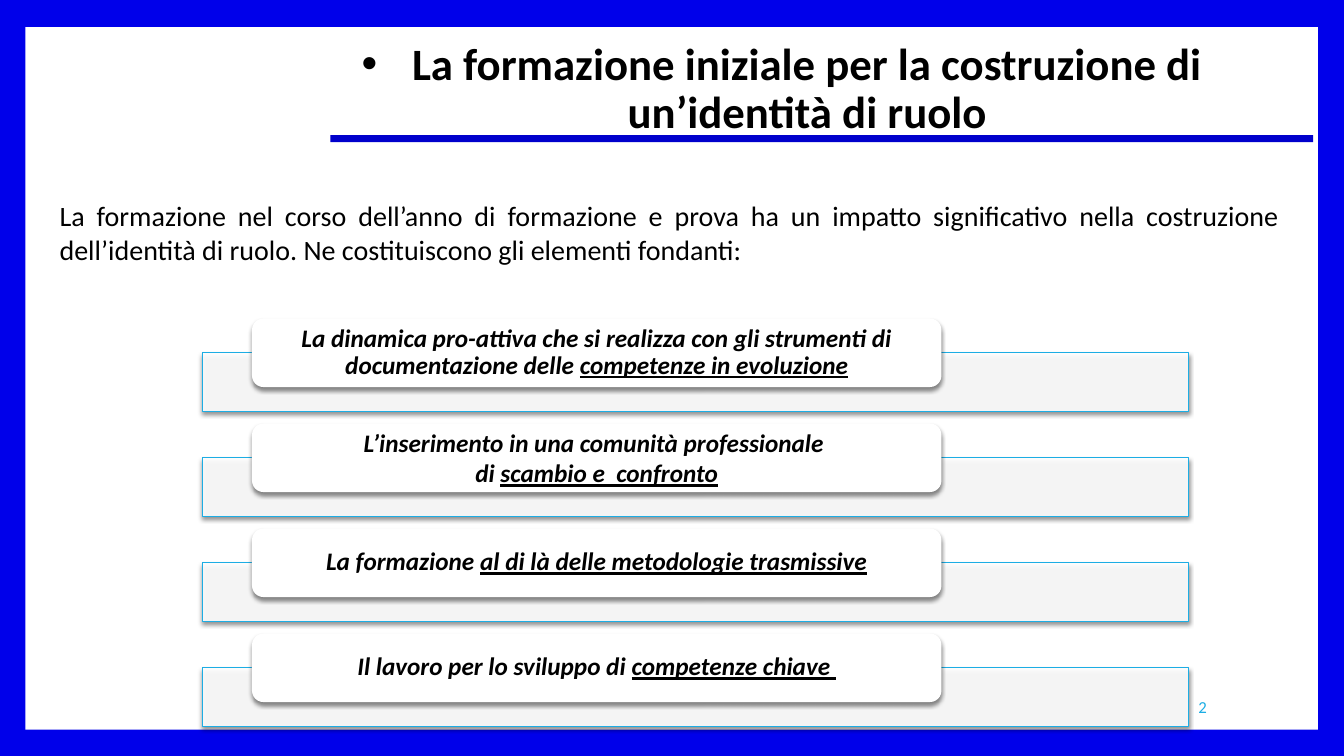
from dataclasses import dataclass
from typing import NamedTuple

from lxml import etree
from pptx import Presentation
from pptx.dml.color import RGBColor
from pptx.enum.shapes import MSO_SHAPE
from pptx.enum.text import MSO_ANCHOR, MSO_AUTO_SIZE, PP_ALIGN
from pptx.oxml.ns import qn
from pptx.util import Emu, Inches, Pt

RECTANGLE, ROUNDED = MSO_SHAPE.RECTANGLE, MSO_SHAPE.ROUNDED_RECTANGLE
TOP, MIDDLE = MSO_ANCHOR.TOP, MSO_ANCHOR.MIDDLE
CENTER, JUSTIFY, RIGHT = PP_ALIGN.CENTER, PP_ALIGN.JUSTIFY, PP_ALIGN.RIGHT
NO_FIT = MSO_AUTO_SIZE.NONE
WIDTH, HEIGHT = Inches(13.33), Inches(7.5)


@dataclass(frozen=True)
class Theme:
    font: str = "Calibri"
    border: str = "0000EA"
    paper: str = "FFFFFF"
    ink: str = "000000"
    rule: str = "0000CC"
    accent: str = "1CADE4"
    title_size: int = 32
    intro_size: int = 20
    card_size: int = 18
    number_size: int = 12


class Area(NamedTuple):
    """Left, top, width and height in percent of the slide."""
    left: float
    top: float
    width: float
    height: float

    def lengths(self) -> tuple[Emu, Emu, Emu, Emu]:
        return (Emu(int(WIDTH * self.left / 100)), Emu(int(HEIGHT * self.top / 100)),
                Emu(int(WIDTH * self.width / 100)), Emu(int(HEIGHT * self.height / 100)))

    def lowered(self, distance: float) -> "Area":
        return self._replace(top=self.top + distance)


class Span(NamedTuple):
    text: str
    underline: bool = False


class Card(NamedTuple):
    lines: list[list[Span]]
    line_spacing: float = 0.9


THEME = Theme()
FRAME = Area(1.88, 3.6, 96.17, 92.93)
TITLE = Area(24.45, 4.8, 67.5, 16.67)
TITLE_RULE = Area(24.58, 17.87, 73.13, 0.93)
INTRO = Area(3.68, 25.6, 92.25, 10.27)
NUMBER = Area(76.5, 90.8, 14.03, 5.33)
BAR = Area(15.08, 46.67, 73.35, 7.73)
CARD = Area(18.75, 42.13, 51.3, 9.07)
ROW_STEP = 13.89

CARDS = [
    Card([[Span("La dinamica pro-attiva che si realizza con gli strumenti di documentazione delle "),
           Span("competenze in evoluzione", True)]]),
    Card([[Span("L’inserimento in una comunità professionale ")],
          [Span("di "), Span("scambio e  confronto", True)]], 1.0),
    Card([[Span("La formazione "), Span("al di là delle metodologie trasmissive", True)]]),
    Card([[Span("Il lavoro per lo sviluppo di "), Span("competenze chiave ", True)]]),
]


def place(shape, area: Area) -> None:
    shape.left, shape.top, shape.width, shape.height = area.lengths()


def add_span(para, span: Span, size: int, color: str = THEME.ink,
             bold: bool = False, italic: bool = False) -> None:
    run = para.add_run()
    run.text = span.text
    font = run.font
    font.name, font.size = THEME.font, Pt(size)
    font.bold, font.italic, font.underline = bold, italic, span.underline
    font.color.rgb = RGBColor.from_string(color)


def set_bullet(para, character: str = "", indent: float = 0) -> None:
    properties = para._p.get_or_add_pPr()
    properties.set("marL", str(Inches(indent)))
    properties.set("indent", str(-Inches(indent)))
    if character:
        etree.SubElement(properties, qn("a:buFont"), typeface="Arial")
        etree.SubElement(properties, qn("a:buChar"), char=character)
    else:
        etree.SubElement(properties, qn("a:buNone"))


def add_panel(page, area: Area, fill: str, kind=RECTANGLE):
    panel = page.shapes.add_shape(kind, *area.lengths())
    panel.shadow.inherit = False
    panel.fill.solid()
    panel.fill.fore_color.rgb = RGBColor.from_string(fill)
    panel.line.fill.background()
    return panel


def add_shadow(shape) -> None:
    effects = shape._element.spPr.find(qn("a:effectLst"))
    shadow = etree.SubElement(effects, qn("a:outerShdw"), blurRad=str(Pt(3)),
                              dist=str(Pt(2)), dir="5400000", rotWithShape="0")
    color = etree.SubElement(shadow, qn("a:srgbClr"), val=THEME.ink)
    etree.SubElement(color, qn("a:alpha"), val="45000")


def add_bar(page, area: Area) -> None:
    bar = add_panel(page, area, THEME.paper)
    color = bar._element.spPr.find(qn("a:solidFill")).find(qn("a:srgbClr"))
    etree.SubElement(color, qn("a:alpha"), val="90000")
    bar.line.color.rgb = RGBColor.from_string(THEME.accent)
    bar.line.width = Pt(0.79)
    add_shadow(bar)


def add_card(page, area: Area, card: Card) -> None:
    shape = add_panel(page, area, THEME.paper, ROUNDED)
    add_shadow(shape)
    frame = shape.text_frame
    frame.word_wrap, frame.vertical_anchor = True, MIDDLE
    frame.margin_left = frame.margin_right = Inches(0.29)
    frame.margin_top = frame.margin_bottom = 0
    for index, line in enumerate(card.lines):
        para = frame.add_paragraph() if index else frame.paragraphs[0]
        para.alignment, para.line_spacing = CENTER, card.line_spacing
        for span in line:
            add_span(para, span, THEME.card_size, bold=True, italic=True)


def fill_placeholder(shape, area: Area, alignment):
    place(shape, area)
    frame = shape.text_frame
    frame.auto_size, frame.word_wrap, frame.vertical_anchor = NO_FIT, True, TOP
    para = frame.paragraphs[0]
    para.alignment, para.space_before = alignment, Pt(0)
    return para


def main() -> None:
    deck = Presentation()
    deck.slide_width, deck.slide_height = WIDTH, HEIGHT
    page = deck.slides.add_slide(deck.slide_layouts[1])

    # Blue border around a white sheet, behind the placeholders
    page.background.fill.solid()
    page.background.fill.fore_color.rgb = RGBColor.from_string(THEME.border)
    sheet = add_panel(page, FRAME, THEME.paper)
    page.shapes._spTree.insert(2, sheet._element)

    # Title and introduction
    para = fill_placeholder(page.shapes.title, TITLE, CENTER)
    para.line_spacing = 0.9
    set_bullet(para, "•", 0.5)
    add_span(para, Span("La formazione iniziale per la costruzione di un’identità di ruolo"),
             THEME.title_size, bold=True)
    para = fill_placeholder(page.placeholders[1], INTRO, JUSTIFY)
    set_bullet(para)
    add_span(para, Span("La formazione nel corso dell’anno di formazione e prova ha un impatto "
                        "significativo nella costruzione dell’identità di ruolo. "
                        "Ne costituiscono gli elementi fondanti:"), THEME.intro_size)

    # Page number
    box = page.shapes.add_textbox(*NUMBER.lengths())
    box.text_frame.word_wrap, box.text_frame.vertical_anchor = True, MIDDLE
    para = box.text_frame.paragraphs[0]
    para.alignment = RIGHT
    add_span(para, Span("2"), THEME.number_size, THEME.accent)

    # Founding elements: a card over a bar in each row
    for row, card in enumerate(CARDS):
        add_bar(page, BAR.lowered(row * ROW_STEP))
        add_card(page, CARD.lowered(row * ROW_STEP), card)

    # Rule under the title
    add_panel(page, TITLE_RULE, THEME.rule)

    deck.save("out.pptx")


if __name__ == "__main__":
    main()
